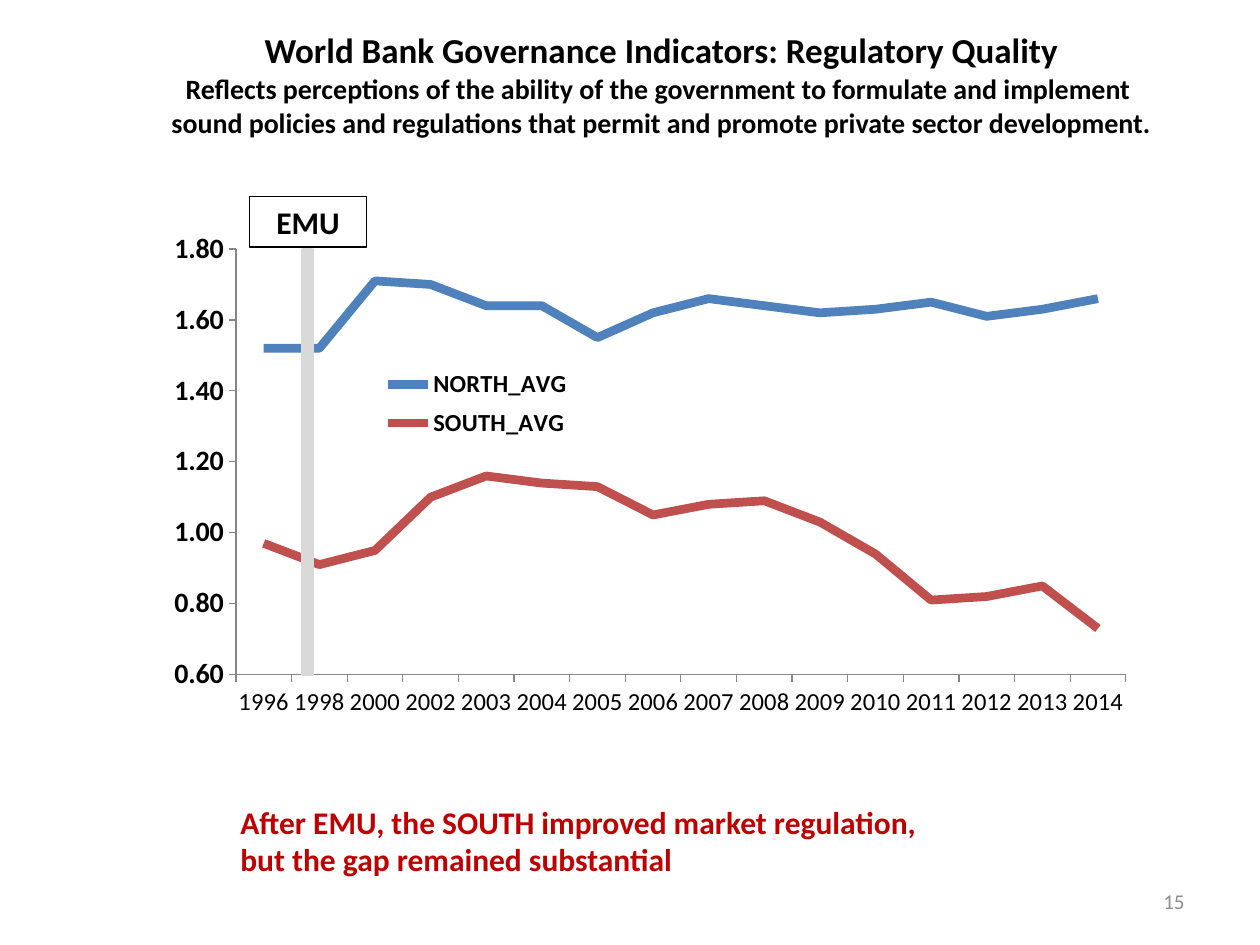
from lxml import etree
from pptx import Presentation
from pptx import util as u
from pptx.chart.data import CategoryChartData
from pptx.dml.color import RGBColor
from pptx.enum import chart as ch, shapes, text
from pptx.oxml import ns

FONT = "Calibri"
HUES = {"ink": "000000", "paper": "FFFFFF", "axis": "868686", "band": "D9D9D9",
        "note": "C00000", "page": "8C8C8C"}
LINES = {"NORTH_AVG": "4F81BD", "SOUTH_AVG": "C0504D"}
YEARS = ["1996", "1998", "2000"] + [str(y) for y in range(2002, 2015)]
DATA = {
    "NORTH_AVG": [1.52, 1.52, 1.71, 1.70, 1.64, 1.64, 1.55, 1.62,
                  1.66, 1.64, 1.62, 1.63, 1.65, 1.61, 1.63, 1.66],
    "SOUTH_AVG": [0.97, 0.91, 0.95, 1.10, 1.16, 1.14, 1.13, 1.05,
                  1.08, 1.09, 1.03, 0.94, 0.81, 0.82, 0.85, 0.73],
}


def rgb(name):
    return RGBColor.from_string(HUES[name])


def inches(box):
    return [u.Inches(n) for n in box]


def style(font, size, hue="ink", bold=True):
    font.name, font.size, font.bold = FONT, u.Pt(size), bold
    font.color.rgb = rgb(hue)


def write(frame, rows, hue="ink", bold=True, align=text.PP_ALIGN.LEFT):
    """Fill a text frame with one paragraph per (words, size) row."""
    for i, (words, size) in enumerate(rows):
        para = frame.add_paragraph() if i else frame.paragraphs[0]
        para.alignment = align
        run = para.add_run()
        run.text = words
        style(run.font, size, hue, bold)


def add_label(slide, box, rows, anchor=text.MSO_ANCHOR.TOP, **look):
    frame = slide.shapes.add_textbox(*inches(box)).text_frame
    frame.word_wrap = True
    frame.vertical_anchor = anchor
    write(frame, rows, **look)


def add_rect(slide, box, fill, line, width):
    rect = slide.shapes.add_shape(shapes.MSO_SHAPE.RECTANGLE, *inches(box))
    rect.shadow.inherit = False
    rect.fill.solid()
    rect.fill.fore_color.rgb = rgb(fill)
    rect.line.color.rgb = rgb(line)
    rect.line.width = u.Pt(width)
    return rect


def add_head(slide, box):
    """Heading in a one-cell table with white borders."""
    table = slide.shapes.add_table(1, 1, *inches(box)).table
    table.first_row = table.horz_banding = False
    cell = table.cell(0, 0)
    cell.fill.solid()
    cell.fill.fore_color.rgb = rgb("paper")
    cell.vertical_anchor = text.MSO_ANCHOR.BOTTOM
    cell.margin_left = cell.margin_right = cell.margin_top = u.Inches(0.01)
    cell.margin_bottom = 0
    write(cell.text_frame, [
        ("World Bank Governance Indicators: Regulatory Quality", 20),
        ("Reflects perceptions of the ability of the government to formulate and implement ", 16),
        ("sound policies and regulations that permit and promote private sector development.", 16),
    ], align=text.PP_ALIGN.CENTER)
    props = cell._tc.get_or_add_tcPr()
    for i, side in enumerate(("lnL", "lnR", "lnT", "lnB")):
        edge = etree.Element(ns.qn("a:" + side), w=str(u.Pt(1)))
        fill = etree.SubElement(edge, ns.qn("a:solidFill"))
        etree.SubElement(fill, ns.qn("a:srgbClr"), val=HUES["paper"])
        props.insert(i, edge)


def make_layout(x, y, w, h, inner=False):
    """Manual chart layout, in fractions of the chart."""
    layout = etree.Element(ns.qn("c:layout"))
    manual = etree.SubElement(layout, ns.qn("c:manualLayout"))
    parts = [("layoutTarget", "inner")] if inner else []
    parts += [("xMode", "edge"), ("yMode", "edge"), ("x", x), ("y", y), ("w", w), ("h", h)]
    for tag, val in parts:
        etree.SubElement(manual, ns.qn("c:" + tag), val=str(val))
    return layout


def set_layout(node, layout, index):
    for old in node.findall(ns.qn("c:layout")):
        node.remove(old)
    node.insert(index, layout)


def add_lines(slide, box):
    data = CategoryChartData(number_format="0.00")
    data.categories = YEARS
    for name, vals in DATA.items():
        data.add_series(name, vals)
    chart = slide.shapes.add_chart(ch.XL_CHART_TYPE.LINE, *inches(box), data).chart
    chart.has_title = False
    style(chart.font, 10, bold=False)

    # Series
    for line in chart.plots[0].series:
        line.smooth = False
        line.marker.style = ch.XL_MARKER_STYLE.NONE
        line.format.line.width = u.Pt(5)
        line.format.line.color.rgb = RGBColor.from_string(LINES[line.name])

    # Axes
    for axis, size, bold in ((chart.category_axis, 14, False), (chart.value_axis, 16, True)):
        axis.has_major_gridlines = False
        axis.major_tick_mark = ch.XL_TICK_MARK.OUTSIDE
        axis.format.line.color.rgb = rgb("axis")
        style(axis.tick_labels.font, size, bold=bold)
    scale = chart.value_axis
    scale.minimum_scale, scale.maximum_scale, scale.major_unit = 0.6, 1.8, 0.2
    scale.tick_labels.number_format = "0.00"
    scale.tick_labels.number_format_is_linked = False

    # Legend inside the plot
    chart.has_legend = True
    key = chart.legend
    key.position = ch.XL_LEGEND_POSITION.RIGHT
    key.include_in_layout = False
    style(key.font, 14)
    set_layout(key._element, make_layout(0.23, 0.26, 0.22, 0.16), 1)
    area = chart._chartSpace.find(".//" + ns.qn("c:plotArea"))
    set_layout(area, make_layout(0.094, 0.051, 0.906, 0.795, inner=True), 0)


def add_mark(slide, band, tag):
    """Vertical band at the start of EMU, with its tag."""
    add_rect(slide, band, "band", "band", 2)
    frame = add_rect(slide, tag, "paper", "ink", 1).text_frame
    write(frame, [("EMU", 18)], align=text.PP_ALIGN.CENTER)


def main():
    deck = Presentation()
    deck.slide_width, deck.slide_height = u.Inches(10), u.Inches(7.5)
    slide = deck.slides.add_slide(deck.slide_layouts[6])
    add_label(slide, (7.17, 6.95, 2.33, 0.4), [("15", 12)], text.MSO_ANCHOR.MIDDLE,
              hue="page", bold=False, align=text.PP_ALIGN.RIGHT)
    add_lines(slide, (1.14, 1.76, 7.8, 4.25))
    add_head(slide, (0.75, 0.23, 9, 0.88))
    add_mark(slide, (2.4, 1.98, 0.08, 3.37), (1.98, 1.56, 0.93, 0.4))
    add_label(slide, (1.81, 6.32, 6.46, 0.71), [
        ("After EMU, the SOUTH improved market regulation,", 18),
        ("but the gap remained substantial", 18),
    ], hue="note")
    deck.save("out.pptx")


if __name__ == "__main__":
    main()
